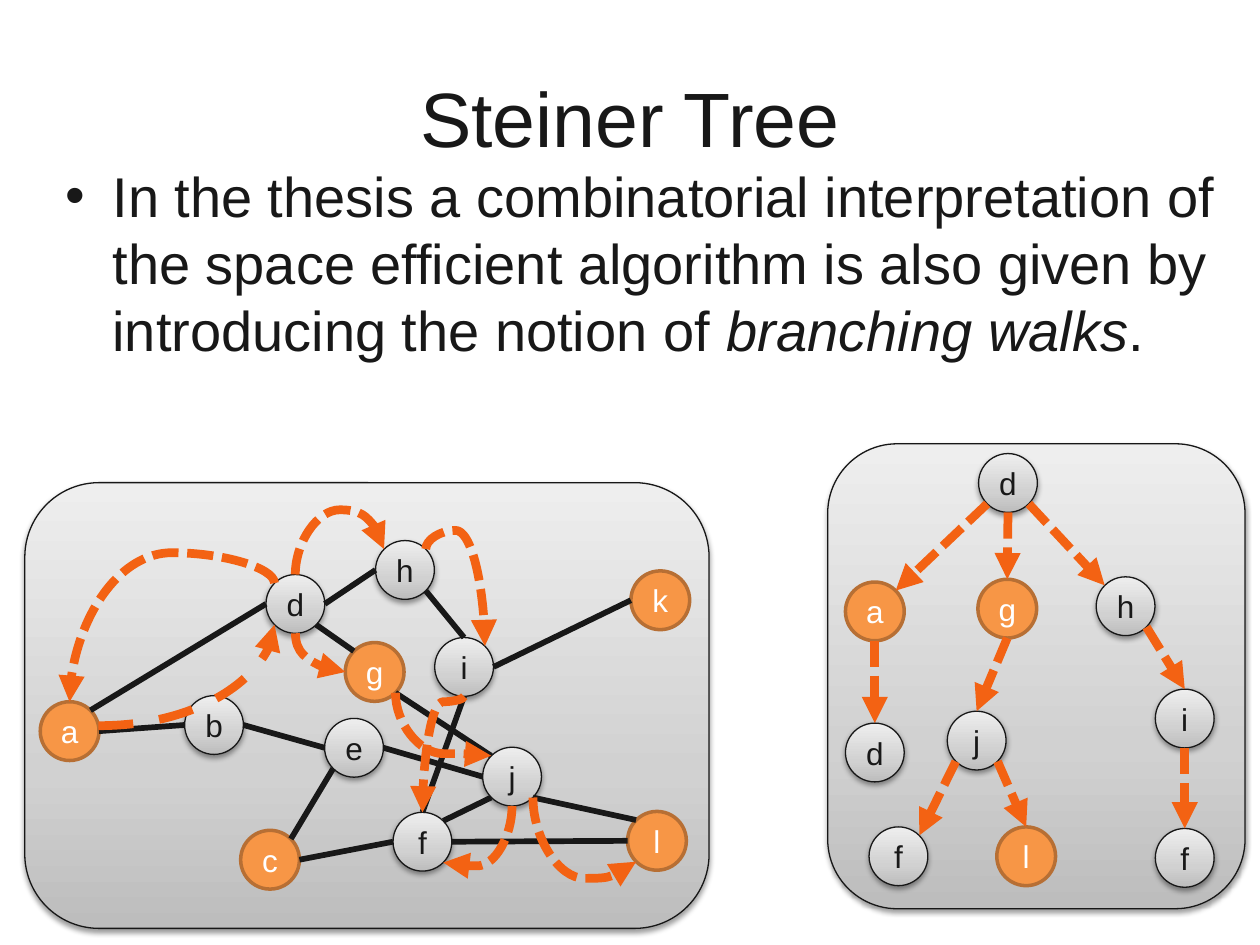
from copy import deepcopy
from dataclasses import dataclass

from lxml import etree
from pptx import Presentation
from pptx.dml.color import RGBColor
from pptx.enum.dml import MSO_LINE
from pptx.enum.shapes import MSO_CONNECTOR, MSO_SHAPE
from pptx.enum.text import MSO_ANCHOR, PP_ALIGN
from pptx.oxml.ns import qn
from pptx.util import Pt

OVAL, PANEL = MSO_SHAPE.OVAL, MSO_SHAPE.ROUNDED_RECTANGLE
STRAIGHT, CURVE = MSO_CONNECTOR.STRAIGHT, MSO_CONNECTOR.CURVE
SHORT_DASH, LONG_DASH = MSO_LINE.SQUARE_DOT, MSO_LINE.DASH
MIDDLE, TOP = MSO_ANCHOR.MIDDLE, MSO_ANCHOR.TOP
CENTER, LEFT = PP_ALIGN.CENTER, PP_ALIGN.LEFT


@dataclass(frozen=True)
class Theme:
    font: str = "Arial"
    ink: str = "181818"
    outline: str = "171717"
    light: str = "FFFFFF"
    terminal: str = "F79646"
    terminal_line: str = "B76F34"
    walk: str = "F36213"
    silver: tuple = ((0, "BDBDBD"), (0.35, "D1D1D1"), (1, "EEEEEE"))
    title_size: float = 44
    body_size: float = 32
    node_size: float = 18
    edge_width: float = 3.25
    walk_width: float = 5
    diameter: float = 33.6


def apply(target, values):
    for name, value in values.items():
        setattr(target, name, value)


def add_child(parent, tag, **attributes):
    return etree.SubElement(parent, qn(tag), attributes)


class SlideBuilder:
    def __init__(self, page, theme):
        self.page = page
        self.theme = theme

    def fill_text(self, frame, spans, size, color, align=CENTER, anchor=MIDDLE):
        """Fill a frame with one paragraph of (text, italic) spans."""
        apply(frame, {"word_wrap": True, "vertical_anchor": anchor})
        para = frame.paragraphs[0]
        para.alignment = align
        for text, italic in spans:
            span = para.add_run()
            span.text = text
            apply(span.font, {"name": self.theme.font, "size": Pt(size), "italic": italic})
            span.font.color.rgb = RGBColor.from_string(color)
        return para

    def title(self, text, left, top, width, height):
        box = self.page.shapes.title
        apply(box, {"left": Pt(left), "top": Pt(top), "width": Pt(width), "height": Pt(height)})
        self.fill_text(box.text_frame, [(text, False)], self.theme.title_size, self.theme.ink)

    def bullet(self, spans, left, top, width, height, indent=27):
        box = self.page.shapes.add_textbox(Pt(left), Pt(top), Pt(width), Pt(height))
        para = self.fill_text(box.text_frame, spans, self.theme.body_size, self.theme.ink, LEFT, TOP)
        para.space_before = Pt(3.6)
        properties = para._p.get_or_add_pPr()
        properties.set("marL", str(Pt(indent)))
        properties.set("indent", str(-Pt(indent)))
        add_child(properties, "a:buFont", typeface=self.theme.font)
        add_child(properties, "a:buChar", char="•")

    def silver(self, shape):
        """Give a shape the grey gradient, thin outline and soft shadow."""
        shape.fill.gradient()
        shape.fill.gradient_angle = 90
        drawing = shape.element.spPr
        stops = drawing.find(".//" + qn("a:gsLst"))
        stops.append(deepcopy(stops[0]))
        for stop, (position, color) in zip(shape.fill.gradient_stops, self.theme.silver):
            stop.position = position
            stop.color.rgb = RGBColor.from_string(color)
        self.outline(shape.line, self.theme.outline, 0.75)
        shadow = add_child(drawing.find(qn("a:effectLst")), "a:outerShdw", blurRad=str(Pt(3.1)),
                           dist=str(Pt(1.6)), dir="5400000", rotWithShape="0")
        color = add_child(shadow, "a:srgbClr", val="000000")
        add_child(color, "a:alpha", val="38000")

    def outline(self, line, color, width):
        line.color.rgb = RGBColor.from_string(color)
        line.width = Pt(width)

    def panel(self, left, top, width, height):
        shape = self.page.shapes.add_shape(PANEL, Pt(left), Pt(top), Pt(width), Pt(height))
        shape.shadow.inherit = False
        self.silver(shape)

    def node(self, label, left, top, terminal):
        theme = self.theme
        size = Pt(theme.diameter)
        shape = self.page.shapes.add_shape(OVAL, Pt(left), Pt(top), size, size)
        shape.shadow.inherit = False
        if terminal:
            shape.fill.solid()
            shape.fill.fore_color.rgb = RGBColor.from_string(theme.terminal)
            self.outline(shape.line, theme.terminal_line, 2)
        else:
            self.silver(shape)
        frame = shape.text_frame
        apply(frame, dict.fromkeys(("margin_left", "margin_right", "margin_top", "margin_bottom"), 0))
        self.fill_text(frame, [(label, False)], theme.node_size,
                       theme.light if terminal else theme.ink)

    def connector(self, start, end, kind=STRAIGHT):
        return self.page.shapes.add_connector(kind, *(Pt(value) for value in (*start, *end)))

    def edge(self, start, end):
        line = self.connector(start, end)
        self.outline(line.line, self.theme.ink, self.theme.edge_width)
        add_child(line.element.spPr, "a:effectLst")

    def walk(self, start, end, dash=SHORT_DASH, kind=STRAIGHT):
        arrow = self.connector(start, end, kind)
        self.outline(arrow.line, self.theme.walk, self.theme.walk_width)
        arrow.line.dash_style = dash
        add_child(arrow.element.spPr.find(qn("a:ln")), "a:tailEnd", type="triangle")
        add_child(arrow.element.spPr, "a:effectLst")
        return arrow

    def curved_walk(self, start, end, turn, bend=None, dash=SHORT_DASH):
        """Turn is 0, 90 or 270 degrees; without a bend the curve is a single arc."""
        arrow = self.walk(start, end, dash, CURVE)
        drawing = arrow.element.spPr
        geometry = drawing.find(qn("a:prstGeom"))
        if bend is None:
            geometry.set("prst", "curvedConnector2")
        else:
            add_child(geometry.find(qn("a:avLst")), "a:gd", name="adj1",
                      fmla=f"val {round(bend * 100000)}")
        if turn == 0:
            return
        across, down = end[0] - start[0], end[1] - start[1]
        width, height = abs(down), abs(across)
        apply(arrow, {"left": Pt((start[0] + end[0] - width) / 2),
                      "top": Pt((start[1] + end[1] - height) / 2),
                      "width": Pt(width), "height": Pt(height)})
        frame = drawing.find(qn("a:xfrm"))
        frame.set("rot", str(turn * 60000))
        frame.set("flipH", str(int((down > 0) == (turn == 270))))
        frame.set("flipV", str(int((across < 0) == (turn == 270))))


# Sites run counter-clockwise from the top of a node in steps of 45 degrees.
SITES = ((0, -1), (-0.71, -0.71), (-1, 0), (-0.71, 0.71),
         (0, 1), (0.71, 0.71), (1, 0), (0.71, -0.71))


def site(nodes, name):
    """Point on a node's rim; "d4" is the bottom of node d."""
    left, top = nodes[name[:-1]]
    across, down = SITES[int(name[-1])]
    radius = Theme.diameter / 2
    return left + radius * (1 + across), top + radius * (1 + down)


TERMINALS = "acgkl"
GRAPH = {"a": (23, 401), "d": (152, 328.3), "e": (185.5, 410.5), "c": (137.5, 474.5),
         "i": (248.4, 364.3), "j": (275.8, 427), "l": (358.6, 463.7), "k": (360.5, 326.2),
         "b": (105.5, 397.5), "f": (224.6, 464.2), "h": (214.6, 308.9), "g": (197.3, 367.2)}
EDGES = ("a6 b2", "c7 e3", "b6 e2", "e6 j2", "i4 f0", "i0 h5", "i6 k2", "a7 d2",
         "c6 f2", "d6 h2", "l1 j5", "f7 j3", "f6 l2", "d5 g1", "g5 j1")
GRAPH_WALK = (("d1 a0", 270, -0.256), ("d4 g2", 270, None), ("d0 h1", 90, 2.543),
              ("h7 i7", 270, -0.193), ("g5 j1", 270, 0.967), ("i4 f0", 90, 0.047),
              ("j4 f5", 90, 1.058), ("j5 l3", 270, 1.259))
# The tree visits d and f twice, so a digit tells the visits apart.
TREE = {"d": (559.2, 259.2), "a": (483.1, 332.6), "g": (558.8, 331), "h": (626.4, 329.6),
        "i": (660.2, 393.8), "f2": (660.2, 473.4), "j": (541.3, 406.4), "l": (569.6, 472.5),
        "f": (496.6, 472.5), "d2": (483.1, 413.2)}
TREE_WALK = ("d3 a7", "d4 g0", "d5 h1", "j3 f7", "j5 l0", "g4 j0", "h5 i0", "i4 f20", "a4 d20")


def main():
    deck = Presentation()
    apply(deck, {"slide_width": Pt(720), "slide_height": Pt(540)})
    builder = SlideBuilder(deck.slides.add_slide(deck.slide_layouts[5]), Theme())
    builder.panel(473, 253.6, 238.5, 265.7)
    builder.panel(14.2, 275.8, 391, 254.7)
    builder.title("Steiner Tree", 36, 21.6, 648, 90)
    builder.bullet([("In the thesis a combinatorial interpretation of the space efficient "
                     "algorithm is also given by introducing the notion of ", False),
                    ("branching walks", True), (".", False)], 30.2, 88.6, 675.4, 356.4)
    for nodes in (GRAPH, TREE):
        for name, (left, top) in nodes.items():
            builder.node(name[0], left, top, name[0] in TERMINALS)
    for pair in EDGES:
        builder.edge(*(site(GRAPH, name) for name in pair.split()))
    for pair, turn, bend in GRAPH_WALK:
        start, end = (site(GRAPH, name) for name in pair.split())
        builder.curved_walk(start, end, turn, bend)
    builder.curved_walk((56.2, 414.7), site(GRAPH, "d3"), 0, dash=LONG_DASH)
    for pair in TREE_WALK:
        builder.walk(*(site(TREE, name) for name in pair.split()))
    deck.save("out.pptx")


if __name__ == "__main__":
    main()
